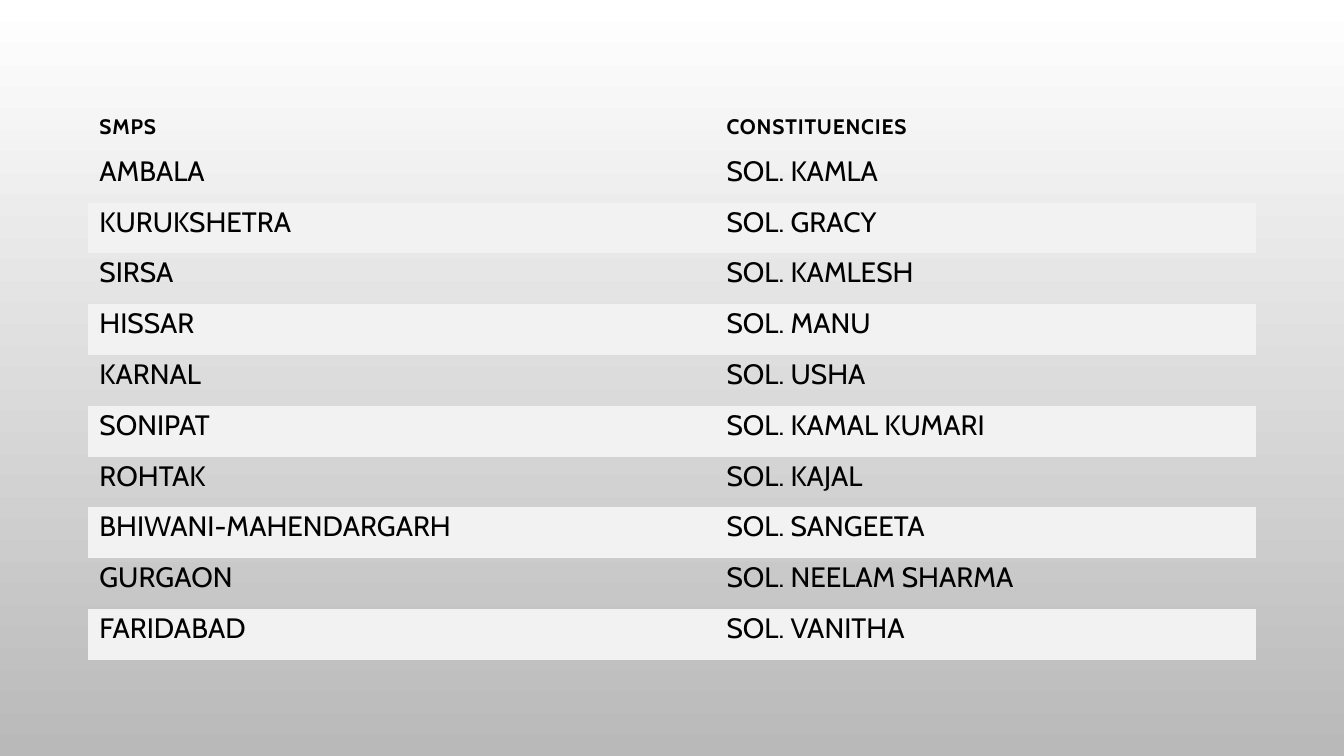
from pptx import Presentation
from pptx.dml.color import RGBColor
from pptx.enum.text import MSO_ANCHOR
from pptx.util import Pt

COLORS = {"text": "000000", "band": "F2F2F2", "top": "FFFFFF", "bottom": "B9B9B9"}
HEADER = {"size": Pt(15), "bold": True}
BODY = {"size": Pt(20), "bold": False}
ROWS = [
    ("SMPS", "CONSTITUENCIES"),
    ("AMBALA", "SOL. KAMLA"),
    ("KURUKSHETRA", "SOL. GRACY"),
    ("SIRSA", "SOL. KAMLESH"),
    ("HISSAR", "SOL. MANU"),
    ("KARNAL", "SOL. USHA"),
    ("SONIPAT", "SOL. KAMAL KUMARI"),
    ("ROHTAK", "SOL. KAJAL"),
    ("BHIWANI-MAHENDARGARH", "SOL. SANGEETA"),
    ("GURGAON", "SOL. NEELAM SHARMA"),
    ("FARIDABAD", "SOL. VANITHA"),
]

prs = Presentation()
prs.slide_width, prs.slide_height = Pt(960), Pt(540)
s = prs.slides.add_slide(prs.slide_layouts[6])

bg = s.background.fill
bg.gradient()
bg.gradient_angle = 270
for stop, name, position in zip(bg.gradient_stops, ("top", "bottom"), (0, 1)):
    stop.color.rgb = RGBColor.from_string(COLORS[name])
    stop.position = position

frame = s.shapes.add_table(len(ROWS), 2, Pt(63), Pt(69), Pt(834), Pt(402.5))
table = frame.table
table.first_row = table.horz_banding = False
style_id = table._tbl.tblPr.find("{*}tableStyleId")
style_id.text = "{2D5ABB26-0587-4C30-8999-92F81FD0307C}"
for column, width in zip(table.columns, (448, 386)):
    column.width = Pt(width)

for i, texts in enumerate(ROWS):
    is_header = i == 0
    table.rows[i].height = Pt(39.5 if is_header else 36.3)
    for j, text in enumerate(texts):
        cell = table.cell(i, j)
        cell.margin_left = cell.margin_right = 0
        cell.margin_top = Pt(8.5 if is_header else 0)
        cell.margin_bottom = Pt(8.5)
        cell.vertical_anchor = MSO_ANCHOR.BOTTOM if is_header else MSO_ANCHOR.MIDDLE
        if i and i % 2 == 0:
            cell.fill.solid()
            cell.fill.fore_color.rgb = RGBColor.from_string(COLORS["band"])
        else:
            cell.fill.background()
        p = cell.text_frame.paragraphs[0]
        p._p.get_or_add_pPr().set("marL", str(Pt(8)))
        r = p.add_run()
        r.text = text
        r.font.name = "Cabin"
        r.font.color.rgb = RGBColor.from_string(COLORS["text"])
        for key, value in (HEADER if is_header else BODY).items():
            setattr(r.font, key, value)
        if is_header:
            r._r.get_or_add_rPr().set("spc", "60")

prs.save("out.pptx")
